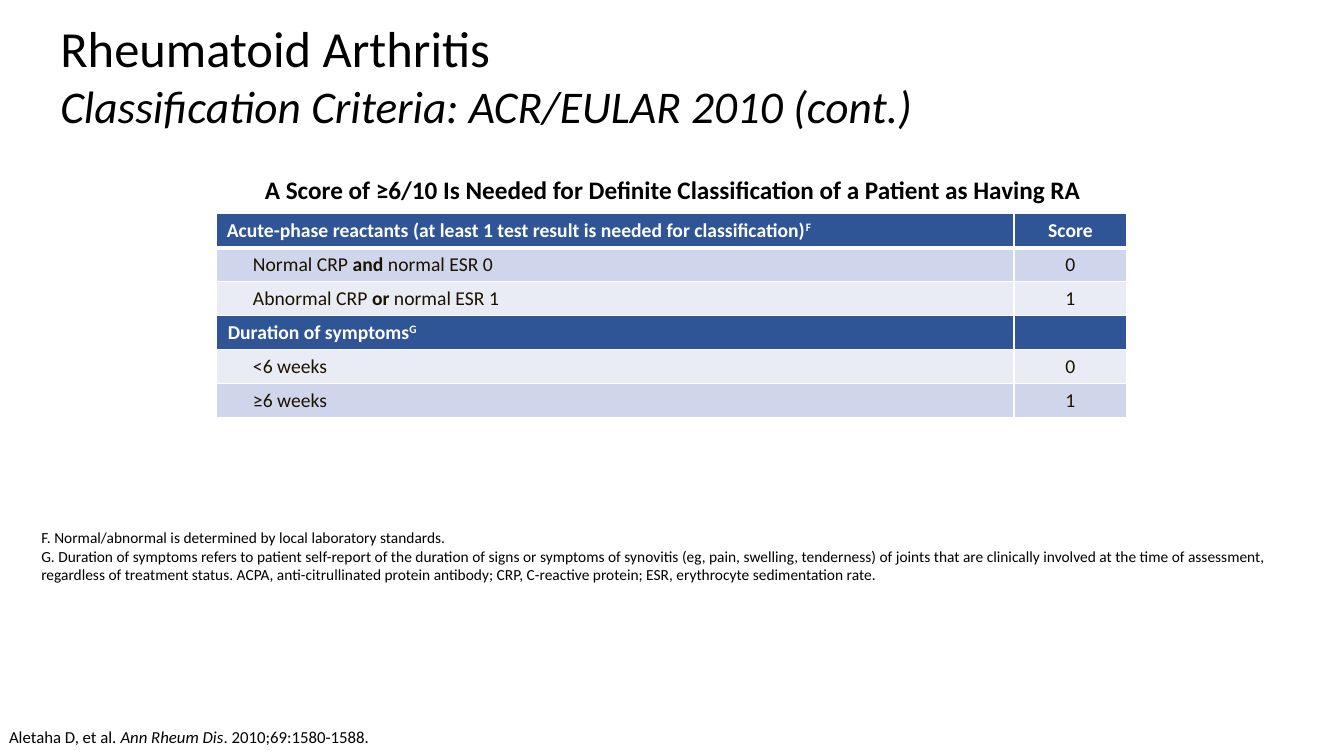
from lxml import etree
from pptx import Presentation
from pptx import util as u
from pptx.dml.color import RGBColor
from pptx.enum import text as t
from pptx.oxml import ns

BLACK = RGBColor(0x00, 0x00, 0x00)
WHITE = RGBColor(0xFF, 0xFF, 0xFF)
INK = RGBColor(0x1A, 0x13, 0x00)
BLUE = RGBColor(0x2F, 0x55, 0x97)
MID = RGBColor(0xCF, 0xD5, 0xEA)
PALE = RGBColor(0xE9, 0xEB, 0xF5)

LEFT, CENTER = t.PP_ALIGN.LEFT, t.PP_ALIGN.CENTER
TOP, MIDDLE, BOTTOM = t.MSO_ANCHOR.TOP, t.MSO_ANCHOR.MIDDLE, t.MSO_ANCHOR.BOTTOM


class Deck:
    """Style and current slide, on a grid of 40 columns by 30 rows."""

    font = "Calibri"

    def __init__(self):
        self.prs = Presentation()
        self.prs.slide_width = u.Inches(40 / 3)
        self.prs.slide_height = u.Inches(7.5)
        self.col = self.prs.slide_width / 40
        self.row = self.prs.slide_height / 30
        self.slide = self.prs.slides.add_slide(self.prs.slide_layouts[6])

    def place(self, x, y, w, h):
        return (round(x * self.col), round(y * self.row),
                round(w * self.col), round(h * self.row))

    def fill_par(self, par, runs, size, color, align=LEFT):
        """Each run is (words, marks): b bold, i italic, ^ superscript."""
        par.alignment = align
        for words, marks in runs:
            run = par.add_run()
            run.text = words
            font = run.font
            font.name, font.size = self.font, u.Pt(size)
            font.color.rgb = color
            font.bold, font.italic = "b" in marks, "i" in marks
            if "^" in marks:
                run._r.get_or_add_rPr().set("baseline", "30000")

    def text(self, box, lines, sizes, anchor=TOP, align=LEFT, pad=0.03):
        frame = self.slide.shapes.add_textbox(*self.place(*box)).text_frame
        frame.word_wrap = True
        frame.vertical_anchor = anchor
        frame.margin_left = frame.margin_right = u.Inches(pad)
        frame.margin_top = frame.margin_bottom = u.Inches(min(pad, 0.05))
        for n, (runs, size) in enumerate(zip(lines, sizes)):
            par = frame.add_paragraph() if n else frame.paragraphs[0]
            self.fill_par(par, runs, size, BLACK, align)

    def edge(self, cell, base):
        """White borders; they come before the fill in the cell's XML."""
        props = cell._tc.get_or_add_tcPr()
        for n, (side, width) in enumerate(zip("LRTB", (1, 1, 1, base))):
            line = etree.Element(ns.qn("a:ln" + side), w=str(u.Pt(width)))
            fill = etree.SubElement(line, ns.qn("a:solidFill"))
            etree.SubElement(fill, ns.qn("a:srgbClr"), val=str(WHITE))
            props.insert(n, line)

    def table(self, x, y, cols, high, rows):
        box = self.place(x, y, sum(cols), high * len(rows))
        grid = self.slide.shapes.add_table(len(rows), len(cols), *box).table
        for column, wide in zip(grid.columns, cols):
            column.width = round(wide * self.col)
        for r, (fill, indent, label, score) in enumerate(rows):
            grid.rows[r].height = round(high * self.row)
            head = fill == BLUE
            for c, runs in enumerate((label, score)):
                cell = grid.cell(r, c)
                cell.fill.solid()
                cell.fill.fore_color.rgb = fill
                self.edge(cell, 1 if r else 3)
                par = cell.text_frame.paragraphs[0]
                self.fill_par(par, runs, 14, WHITE if head else INK,
                              CENTER if c else LEFT)
                if not c:
                    par._p.get_or_add_pPr().set("marL", str(u.Inches(indent)))
                if not runs:
                    cell.margin_top = cell.margin_bottom = 0


def main():
    deck = Deck()

    # Criteria table: fill, indent, label, score
    rows = [
        (BLUE, 0, [("Acute-phase reactants (at least 1 test result is needed "
                    "for classification)", "b"), ("F", "b^")],
         [("Score", "b")]),
        (MID, 0.26, [("Normal CRP ", ""), ("and", "b"),
                     (" normal ESR 0", "")], [("0", "")]),
        (PALE, 0.26, [("Abnormal CRP ", ""), ("or", "b"),
                      (" normal ESR 1", "")], [("1", "")]),
        (BLUE, 0.01, [("Duration of symptoms", "b"), ("G", "b^")], []),
        (PALE, 0.26, [("<6 weeks", "")], [("0", "")]),
        (MID, 0.26, [("≥6 weeks", "")], [("1", "")]),
    ]
    deck.table(6.45, 8.48, (23.73, 3.36), 1.35, rows)

    # Title
    deck.text((1.5, 0.8, 35.07, 4.32),
              [[("Rheumatoid Arthritis", "")],
               [("Classification Criteria: ACR/EULAR 2010 (cont.)", "i")]],
              (36.1, 32.4), MIDDLE, pad=0.1)

    # Source
    deck.text((0.18, 28.72, 17, 1.04),
              [[("Aletaha D, et al. ", ""), ("Ann Rheum Dis", "i"),
                (". 2010;69:1580-1588.", "")]], (12,), BOTTOM)

    # Footnotes
    deck.text((1.14, 20.84, 37.71, 2.48),
              [[("F. Normal/abnormal is determined by local laboratory "
                 "standards.", "")],
               [("G. Duration of symptoms refers to patient self-report of "
                 "the duration of signs or symptoms of synovitis (eg, pain, "
                 "swelling, tenderness) of joints that are clinically "
                 "involved at the time of assessment, regardless of treatment "
                 "status. ACPA, anti-citrullinated protein antibody; CRP, "
                 "C-reactive protein; ESR, erythrocyte sedimentation rate.",
                 "")]], (11, 11))

    # Table caption
    deck.text((5.31, 6.8, 29.43, 1.44),
              [[("A Score of ≥6/10 Is Needed for Definite Classification of "
                 "a Patient as Having RA", "b")]], (18,), BOTTOM, CENTER)

    deck.prs.save("out.pptx")


if __name__ == "__main__":
    main()
